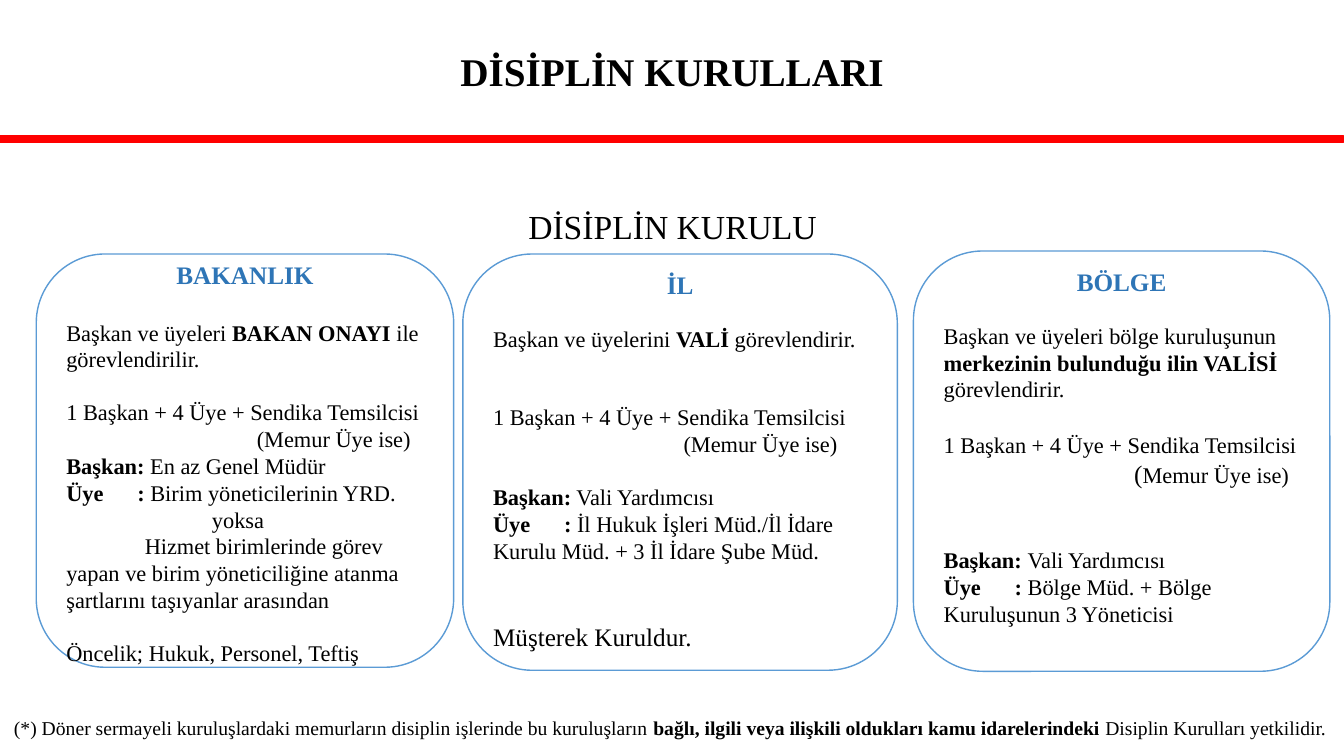
"""Builds the slide on disciplinary boards as three cards under a title."""
from lxml import etree
from pptx import Presentation
from pptx import util as u
from pptx.dml.color import RGBColor
from pptx.enum import shapes, text
from pptx.oxml.ns import qn

WIDTH, HEIGHT = 13.33, 7.5
FONT = "Times New Roman"
COLORS = {"black": "000000", "heading": "2E75B6", "outline": "5B9BD5",
          "red": "FF0000", "white": "FFFFFF"}
BODY, HEADING = 16, 18
LINE = 1.15
ROLE_TAB = 50.7
NOTE_INDENT = 136

TITLE = [("DİSİPLİN KURULLARI", 28, True)]
SUBTITLE = [("DİSİPLİN KURULU", 24, False)]
MEMBERS = [("1 Başkan + 4 Üye + Sendika Temsilcisi", BODY, False)]
UNION_NOTE = [("(Memur Üye ise)", BODY, False)]
MEMBER_ROLE = ("Üye\t:", BODY, True)
FOOTNOTE = [
    ("(*) Döner sermayeli kuruluşlardaki memurların disiplin işlerinde bu kuruluşların ", 14, False),
    ("bağlı, ilgili veya ilişkili oldukları kamu idarelerindeki ", 14, True),
    ("Disiplin Kurulları yetkilidir.", 14, False),
]

# heading, (left, top, width, height), (top inset, bottom inset),
# then paragraphs as (points before, first-line indent, runs)
CARDS = [
    ("BAKANLIK", (0.36, 2.52, 4.14, 4.1), (0.09, 0.05), [
        (LINE * HEADING, 0, [("Başkan ve üyeleri ", BODY, False), ("BAKAN ONAYI ", BODY, True),
                             ("ile görevlendirilir.", BODY, False)]),
        (LINE * BODY, 0, MEMBERS),
        (0, NOTE_INDENT, UNION_NOTE),
        (0, 0, [("Başkan:", BODY, True), (" En az Genel Müdür", BODY, False)]),
        (0, 0, [MEMBER_ROLE, (" Birim yöneticilerinin YRD.", BODY, False)]),
        (0, 104, [("yoksa", BODY, False)]),
        (0, 56, [("Hizmet birimlerinde görev yapan ve birim yöneticiliğine atanma "
                  "şartlarını taşıyanlar arasından", BODY, False)]),
        (LINE * BODY, 0, [("Öncelik; Hukuk, Personel, Teftiş", BODY, False)]),
    ]),
    ("İL", (4.59, 2.52, 4.31, 4.13), (0.05, 0.08), [
        (LINE * BODY, 0, [("Başkan ve üyelerini ", BODY, False), ("VALİ", BODY, True),
                          (" görevlendirir.", BODY, False)]),
        (2 * LINE * BODY, 0, MEMBERS),
        (0, NOTE_INDENT, UNION_NOTE),
        (LINE * BODY, 0, [("Başkan:", BODY, True), (" Vali Yardımcısı", BODY, False)]),
        (0, 0, [MEMBER_ROLE, (" İl Hukuk İşleri Müd./İl İdare Kurulu Müd. + 3 İl İdare "
                              "Şube Müd.", BODY, False)]),
        (2 * LINE * HEADING, 0, [("Müşterek Kuruldur.", HEADING, False)]),
    ]),
    ("BÖLGE", (9.06, 2.49, 4.13, 4.17), (0.05, 0.34), [
        (LINE * BODY, 0, [("Başkan ve üyeleri bölge kuruluşunun ", BODY, False),
                          ("merkezinin bulunduğu ilin VALİSİ ", BODY, True),
                          ("görevlendirir.", BODY, False)]),
        (LINE * HEADING, 0, MEMBERS),
        (0, NOTE_INDENT, [("(", HEADING, False), ("Memur Üye ise)", BODY, False)]),
        (2 * LINE * HEADING, 0, [("Başkan: ", BODY, True), ("Vali Yardımcısı", BODY, False)]),
        (0, 0, [MEMBER_ROLE, (" Bölge Müd. + Bölge Kuruluşunun 3 Yöneticisi", BODY, False)]),
    ]),
]


def color(name):
    return RGBColor.from_string(COLORS[name])


def place(bounds):
    return [u.Inches(value) for value in bounds]


def write(para, runs, tone="black", align=text.PP_ALIGN.LEFT, before=0, indent=0):
    props = para._p.get_or_add_pPr()
    if indent:
        props.set("marL", "0")
        props.set("indent", str(u.Pt(indent)))
    if any("\t" in words for words, _, _ in runs):
        tabs = etree.SubElement(props, qn("a:tabLst"))
        etree.SubElement(tabs, qn("a:tab"), pos=str(u.Pt(ROLE_TAB)), algn="l")
    para.alignment = align
    if before:
        para.space_before = u.Pt(before)
    for words, size, bold in runs:
        span = para.add_run()
        span.text = words
        span.font.name, span.font.size, span.font.bold = FONT, u.Pt(size), bold
        span.font.color.rgb = color(tone)


def add_block(page, kind, bounds, fill, outline, weight):
    block = page.shapes.add_shape(kind, *place(bounds))
    block.shadow.inherit = False
    block.fill.solid()
    block.fill.fore_color.rgb = color(fill)
    block.line.color.rgb = color(outline)
    block.line.width = u.Pt(weight)
    return block


def add_label(page, bounds, runs, align):
    frame = page.shapes.add_textbox(*place(bounds)).text_frame
    frame.word_wrap = True
    frame.auto_size = text.MSO_AUTO_SIZE.SHAPE_TO_FIT_TEXT
    write(frame.paragraphs[0], runs, align=align)


def add_card(page, heading, bounds, insets, paragraphs):
    card = add_block(page, shapes.MSO_SHAPE.ROUNDED_RECTANGLE, bounds, "white", "outline", 1)
    frame = card.text_frame
    frame.word_wrap = True
    frame.vertical_anchor = text.MSO_ANCHOR.MIDDLE
    frame.margin_top, frame.margin_bottom = place(insets)
    write(frame.paragraphs[0], [(heading, HEADING, True)], "heading", text.PP_ALIGN.CENTER)
    for before, indent, runs in paragraphs:
        write(frame.add_paragraph(), runs, before=before, indent=indent)


def main():
    deck = Presentation()
    deck.slide_width, deck.slide_height = place((WIDTH, HEIGHT))
    page = deck.slides.add_slide(deck.slide_layouts[5])

    title = page.shapes.title
    title.left, title.top, title.width, title.height = place((0, 0, WIDTH, 1.46))
    frame = title.text_frame
    frame.auto_size = text.MSO_AUTO_SIZE.NONE
    frame.vertical_anchor = text.MSO_ANCHOR.MIDDLE
    frame.paragraphs[0].line_spacing = 0.9
    write(frame.paragraphs[0], TITLE, align=text.PP_ALIGN.CENTER)

    add_block(page, shapes.MSO_SHAPE.RECTANGLE, (0, 1.35, WIDTH, 0.05), "red", "red", 2.25)
    add_label(page, (2.88, 1.99, 7.58, 0.5), SUBTITLE, text.PP_ALIGN.CENTER)
    for card in CARDS:
        add_card(page, *card)
    add_label(page, (0.04, 7.05, WIDTH - 0.04, 0.34), FOOTNOTE, text.PP_ALIGN.LEFT)
    deck.save("out.pptx")


if __name__ == "__main__":
    main()
